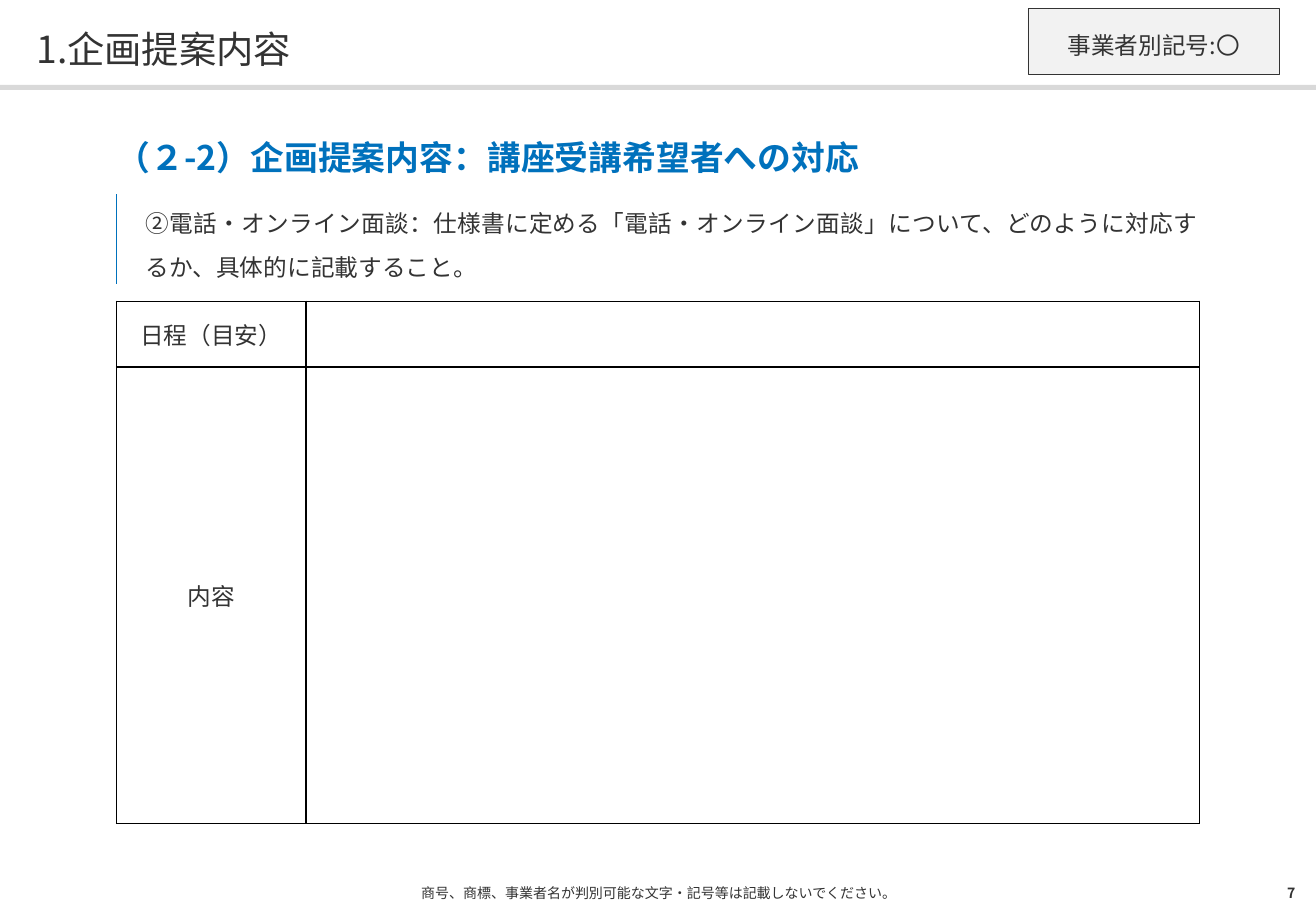
import pptx
import pptx.dml.color
import pptx.enum.shapes
import pptx.enum.text
import pptx.oxml.ns
import pptx.util
from lxml import etree

Inches = pptx.util.Inches
Pt = pptx.util.Pt
RGBColor = pptx.dml.color.RGBColor
ALIGN = pptx.enum.text.PP_ALIGN
MIDDLE = pptx.enum.text.MSO_ANCHOR.MIDDLE
TOP = pptx.enum.text.MSO_ANCHOR.TOP
RECTANGLE = pptx.enum.shapes.MSO_SHAPE.RECTANGLE

FONT = "Noto Sans CJK JP"
DARK = RGBColor(0x33, 0x33, 0x33)
BLUE = RGBColor(0x00, 0x71, 0xBC)
RULE_GRAY = RGBColor(0xD9, 0xD9, 0xD9)
BADGE_GRAY = RGBColor(0xF2, 0xF2, 0xF2)
BLACK = RGBColor(0, 0, 0)

SLIDE_WIDTH, SLIDE_HEIGHT = 10.83, 7.5
TABLE_LEFT = 0.96
BADGE = "事業者別記号:〇"
HEADING = "（２-2）企画提案内容：講座受講希望者への対応"
INSTRUCTION = (
    "②電話・オンライン面談：仕様書に定める「電話・オンライン面談」について、"
    "どのように対応するか、具体的に記載すること。"
)
FORM_LABELS = ["日程（目安）", "内容"]
# text, (left, top, width, height), size, alignment, bold, line spacing
TEXT_BOXES = [
    ("1.企画提案内容", (0.3, 0.17, 10.24, 0.43), 22.1, ALIGN.LEFT, False, 1.1),
    ("商号、商標、事業者名が判別可能な文字・記号等は記載しないでください。",
     (0.89, 7.21, 9.06, 0.29), 8.3, ALIGN.CENTER, False, 1.0),
    ("7", (10.14, 7.21, 0.52, 0.28), 8.3, ALIGN.RIGHT, True, 1.0),
]


def write(text_frame, text, size, align=ALIGN.LEFT, bold=False, spacing=1.0, color=DARK):
    text_frame.text = text
    paragraph = text_frame.paragraphs[0]
    paragraph.alignment = align
    paragraph.line_spacing = spacing
    font = paragraph.runs[0].font
    font.size = Pt(size)
    font.bold = bold
    font.name = FONT
    font.color.rgb = color
    east_asian = etree.SubElement(font._element, pptx.oxml.ns.qn("a:ea"))
    east_asian.set("typeface", FONT)


def set_insets(target, left, top, right, bottom):
    target.margin_left, target.margin_top = Inches(left), Inches(top)
    target.margin_right, target.margin_bottom = Inches(right), Inches(bottom)


def style_cell(cell, insets, anchor, borders):
    """Clear the fill and draw only the borders given as {side: (color, width)}."""
    set_insets(cell, *insets)
    cell.vertical_anchor = anchor
    properties = cell._tc.get_or_add_tcPr()
    for side in "LRTB":
        line = etree.SubElement(properties, pptx.oxml.ns.qn(f"a:ln{side}"))
        if side in borders:
            color, width = borders[side]
            line.set("w", str(Pt(width)))
            fill = etree.SubElement(line, pptx.oxml.ns.qn("a:solidFill"))
            etree.SubElement(fill, pptx.oxml.ns.qn("a:srgbClr")).set("val", str(color))
        else:
            line.set("w", "0")
            etree.SubElement(line, pptx.oxml.ns.qn("a:noFill"))
    cell.fill.background()


def add_plain_table(slide, top, widths, heights):
    frame = slide.shapes.add_table(
        len(heights), len(widths), Inches(TABLE_LEFT), Inches(top),
        Inches(sum(widths)), Inches(sum(heights)))
    table = frame.table
    table.first_row = table.horz_banding = False
    for column, width in zip(table.columns, widths):
        column.width = Inches(width)
    for row, height in zip(table.rows, heights):
        row.height = Inches(height)
    return table


def add_rectangle(slide, box, fill):
    shape = slide.shapes.add_shape(RECTANGLE, *map(Inches, box))
    shape.shadow.inherit = False
    shape.fill.solid()
    shape.fill.fore_color.rgb = fill
    shape.line.fill.background()
    return shape


def main():
    presentation = pptx.Presentation()
    presentation.slide_width = Inches(SLIDE_WIDTH)
    presentation.slide_height = Inches(SLIDE_HEIGHT)
    slide = presentation.slides.add_slide(presentation.slide_layouts[6])

    add_rectangle(slide, (0, 0.7, SLIDE_WIDTH, 0.04), RULE_GRAY)

    for text, box, size, align, bold, spacing in TEXT_BOXES:
        text_frame = slide.shapes.add_textbox(*map(Inches, box)).text_frame
        text_frame.word_wrap = True
        text_frame.vertical_anchor = MIDDLE
        set_insets(text_frame, 0, 0, 0, 0)
        write(text_frame, text, size, align, bold, spacing)

    heading_table = add_plain_table(slide, 1.04, [8.9], [0.56, 0.74])
    heading, instruction = heading_table.cell(0, 0), heading_table.cell(1, 0)
    style_cell(heading, (0, 0, 0, 0.12), TOP, {})
    write(heading.text_frame, HEADING, 20, bold=True, spacing=1.1, color=BLUE)
    style_cell(instruction, (0.24, 0, 0, 0), TOP, {"L": (BLUE, 0.5)})
    write(instruction.text_frame, INSTRUCTION, 14, ALIGN.JUSTIFY, spacing=1.3)

    form = add_plain_table(slide, 2.48, [1.56, 7.35], [0.54, 3.76])
    for cell in form.iter_cells():
        style_cell(cell, (0.08,) * 4, MIDDLE, dict.fromkeys("LRTB", (BLACK, 1)))
    for row, label in enumerate(FORM_LABELS):
        write(form.cell(row, 0).text_frame, label, 14, ALIGN.CENTER)

    badge = add_rectangle(slide, (8.46, 0.07, 2.07, 0.54), BADGE_GRAY)
    badge.line.color.rgb = DARK
    badge.line.width = Pt(0.5)
    badge.text_frame.word_wrap = False
    badge.text_frame.vertical_anchor = MIDDLE
    set_insets(badge.text_frame, 0.28, 0.16, 0.28, 0.12)
    write(badge.text_frame, BADGE, 14, ALIGN.CENTER, spacing=1.1)

    presentation.save("out.pptx")


if __name__ == "__main__":
    main()
